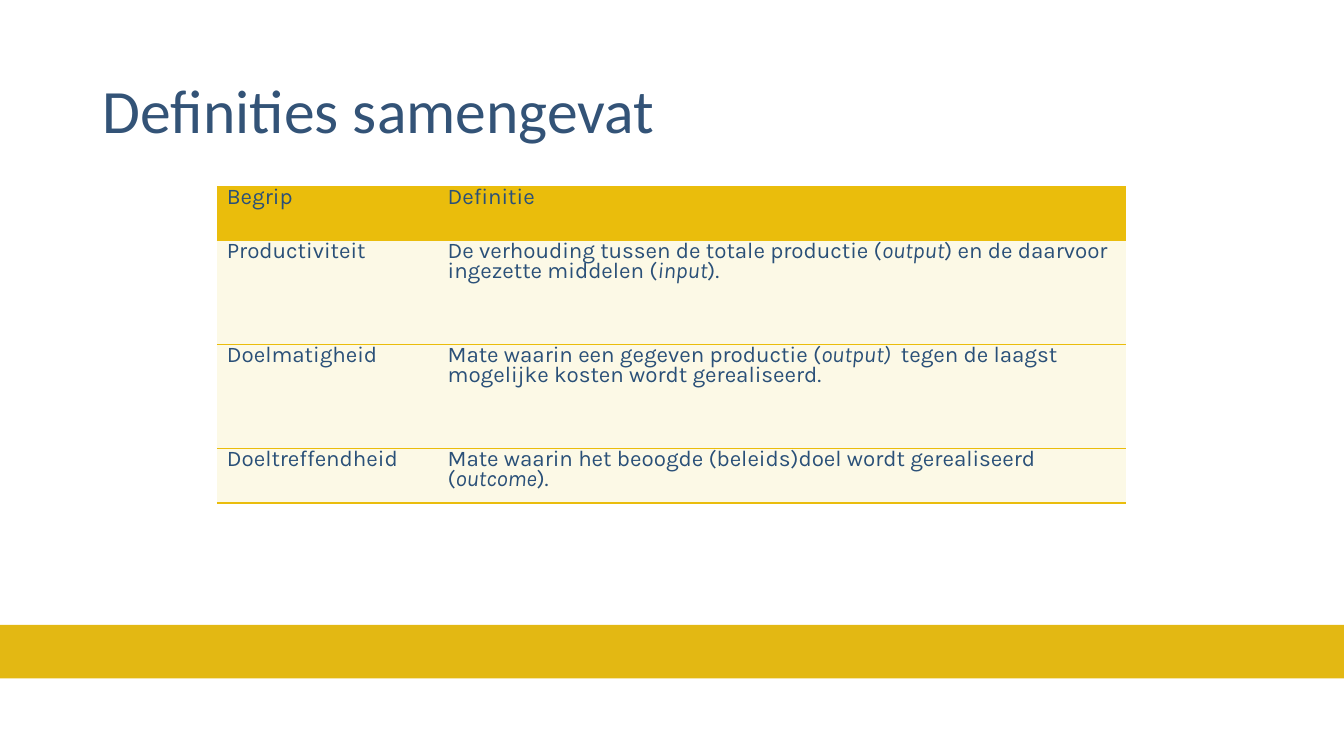
from dataclasses import dataclass

from lxml import etree
from pptx import Presentation
from pptx.dml.color import RGBColor
from pptx.enum.shapes import MSO_SHAPE
from pptx.enum.text import MSO_ANCHOR, PP_ALIGN
from pptx.oxml.ns import qn
from pptx.util import Inches, Pt

RECTANGLE = MSO_SHAPE.RECTANGLE
MIDDLE, TOP = MSO_ANCHOR.MIDDLE, MSO_ANCHOR.TOP
LEFT = PP_ALIGN.LEFT
TITLE_ONLY = 5


@dataclass(frozen=True)
class Theme:
    title_font: str = "Calibri"
    body_font: str = "Karla"
    title_size: int = 44
    body_size: int = 16
    line_pitch: float = 14.5
    title_color: str = "335377"
    body_color: str = "2A5078"
    band: str = "E3B813"
    header: str = "EABD0C"
    row: str = "FCF9E6"
    rule: str = "EABD0C"
    page: str = "FFFFFF"


def write(frame, text, font, size, color, spacing):
    para = frame.paragraphs[0]
    para.alignment = LEFT
    para.line_spacing = spacing
    for index, part in enumerate(text.split("*")):
        if not part:
            continue
        span = para.add_run()
        span.text = part
        span.font.name = font
        span.font.size = Pt(size)
        span.font.color.rgb = RGBColor.from_string(color)
        span.font.bold = False
        span.font.italic = index % 2 == 1


def set_borders(cell, color):
    properties = cell._tc.get_or_add_tcPr()
    for index, side in enumerate(("lnL", "lnR", "lnT", "lnB")):
        line = etree.Element(qn(f"a:{side}"), w=str(Pt(1)))
        if side in ("lnT", "lnB"):
            fill = etree.SubElement(line, qn("a:solidFill"))
            etree.SubElement(fill, qn("a:srgbClr"), val=color)
        else:
            etree.SubElement(line, qn("a:noFill"))
        properties.insert(index, line)


class SlideBuilder:
    def __init__(self, page, theme):
        self.page = page
        self.theme = theme
        page.background.fill.solid()
        page.background.fill.fore_color.rgb = RGBColor.from_string(theme.page)

    def title(self, text, left, top, width, height):
        box = self.page.shapes.title
        box.left, box.top = Inches(left), Inches(top)
        box.width, box.height = Inches(width), Inches(height)
        box.text_frame.vertical_anchor = MIDDLE
        box.text_frame.word_wrap = True
        write(box.text_frame, text, self.theme.title_font,
              self.theme.title_size, self.theme.title_color, 0.9)

    def band(self, left, top, width, height):
        box = self.page.shapes.add_shape(
            RECTANGLE, Inches(left), Inches(top), Inches(width), Inches(height))
        box.shadow.inherit = False
        box.fill.solid()
        box.fill.fore_color.rgb = RGBColor.from_string(self.theme.band)
        box.line.fill.background()

    def table(self, rows, left, top, widths, heights):
        table = self.page.shapes.add_table(
            len(rows), len(widths), Inches(left), Inches(top),
            Inches(sum(widths)), Inches(sum(heights))).table
        table.first_row = False
        table.horz_banding = False
        for column, width in zip(table.columns, widths):
            column.width = Inches(width)
        for index, (texts, height) in enumerate(zip(rows, heights)):
            table.rows[index].height = Inches(height)
            fill = self.theme.row if index else self.theme.header
            for column, text in enumerate(texts):
                self.cell(table.cell(index, column), text, fill)

    def cell(self, cell, text, fill):
        cell.margin_left = cell.margin_right = Inches(0.1)
        cell.margin_top = cell.margin_bottom = Inches(0.03)
        cell.vertical_anchor = TOP
        cell.fill.solid()
        cell.fill.fore_color.rgb = RGBColor.from_string(fill)
        set_borders(cell, self.theme.rule)
        write(cell.text_frame, text, self.theme.body_font,
              self.theme.body_size, self.theme.body_color,
              Pt(self.theme.line_pitch))


DEFINITIONS = [
    ("Begrip", "Definitie"),
    ("Productiviteit",
     "De verhouding tussen de totale productie (*output*) en de daarvoor "
     "ingezette middelen (*input*)."),
    ("Doelmatigheid",
     "Mate waarin een gegeven productie (*output) * tegen de laagst "
     "mogelijke kosten wordt gerealiseerd."),
    ("Doeltreffendheid",
     "Mate waarin het beoogde (beleids)doel wordt gerealiseerd (*outcome*)."),
]


def main():
    deck = Presentation()
    deck.slide_width, deck.slide_height = Inches(13.33), Inches(7.5)
    page = deck.slides.add_slide(deck.slide_layouts[TITLE_ONLY])
    builder = SlideBuilder(page, Theme())
    builder.band(0, 6.2, 13.33, 0.53)
    builder.title("Definities samengevat", 0.92, 0.4, 11.5, 1.45)
    builder.table(DEFINITIONS, 2.15, 1.85, (2.19, 6.83),
                  (0.54, 1.03, 1.03, 0.54))
    deck.save("out.pptx")


if __name__ == "__main__":
    main()
